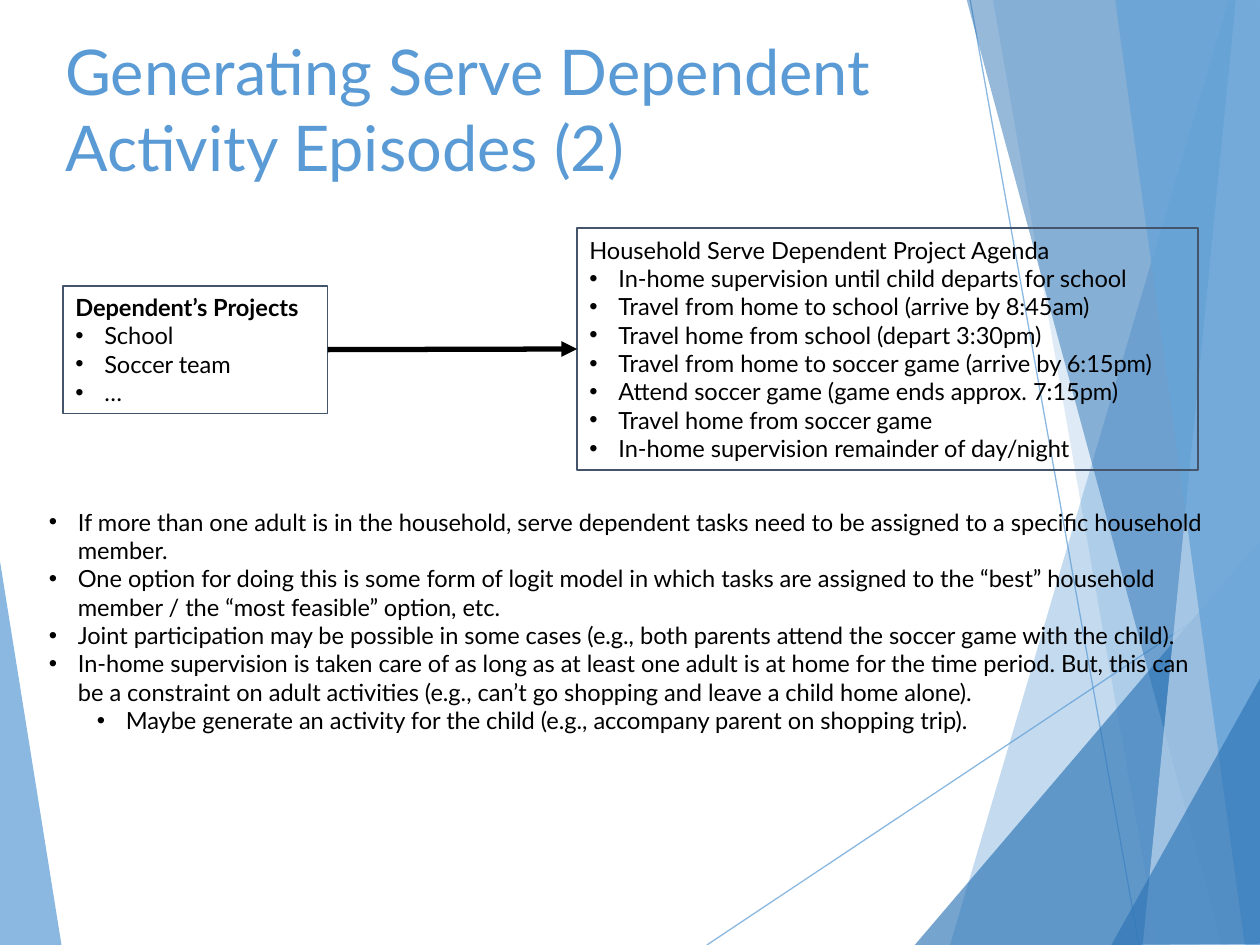
from lxml import etree
from pptx import Presentation
from pptx import util as u
from pptx.dml.color import RGBColor
from pptx.enum import shapes, text
from pptx.oxml.ns import qn

SCALE = 9144  # EMU per px, 100 px to the inch
FONT = "Lato"
BLUE, DEEP, PALE, MID = "5B9BD5", "2E75B6", "BDD7EE", "68A4D8"
BLACK, SLATE = "000000", "44546A"

# Facets from back to front: colour, opacity in percent, corners
WEDGE = (BLUE, 70, [(-1, 439), (49, 751), (-1, 750)])
FACETS = [
    (BLUE, 36, [(975, 0), (754, 750), (1002, 751), (1001, 1)]),
    (BLUE, 20, [(788, -1), (919, 750), (1001, 750), (1001, -1)]),
    (DEEP, 66, [(726, 750), (1000, 429), (1001, 750)]),
    (DEEP, 50, [(767, -1), (970, 750), (1001, 749), (1001, -1)]),
    (PALE, 70, [(981, -1), (907, 750), (1001, 750), (1000, -1)]),
    (MID, 82, [(885, -1), (988, 750), (1002, 750), (1000, -1)]),
    (DEEP, 66, [(882, 750), (1002, 535), (1002, 749)]),
]
RAYS = [((561, 750), (1001, 457)), ((770, 0), (904, 750))]

PROJECTS = ["Dependent’s Projects", "School", "Soccer team", "…"]
AGENDA = [
    "Household Serve Dependent Project Agenda",
    "In-home supervision until child departs for school",
    "Travel from home to school (arrive by 8:45am)",
    "Travel home from school (depart 3:30pm)",
    "Travel from home to soccer game (arrive by 6:15pm)",
    "Attend soccer game (game ends approx. 7:15pm)",
    "Travel home from soccer game",
    "In-home supervision remainder of day/night",
]
NOTES = [
    "If more than one adult is in the household, serve dependent tasks need to be "
    "assigned to a specific household member.",
    "One option for doing this is some form of logit model in which tasks are "
    "assigned to the “best” household member / the “most feasible” option, etc.",
    "Joint participation may be possible in some cases (e.g., both parents attend "
    "the soccer game with the child).",
    "In-home supervision is taken care of as long as at least one adult is at home "
    "for the time period. But, this can be a constraint on adult activities "
    "(e.g., can’t go shopping and leave a child home alone).",
    "Maybe generate an activity for the child (e.g., accompany parent on "
    "shopping trip).",
]


def px(*vals):
    return [u.Emu(v * SCALE) for v in vals]


def rgb(code):
    return RGBColor.from_string(code)


def fade(props, pct):
    """Set the opacity of the solid fill held by shape or line properties."""
    tone = props.find(qn("a:solidFill"))[0]
    etree.SubElement(tone, qn("a:alpha"), val=str(pct * 1000))


def bullet(para, left, level=0):
    """Give a paragraph a bullet that hangs 23 px before its text."""
    para.level = level
    props = para._p.get_or_add_pPr()
    props.set("marL", str(left * SCALE))
    props.set("indent", str(-23 * SCALE))
    etree.SubElement(props, qn("a:buFont"), typeface="Arial")
    etree.SubElement(props, qn("a:buChar"), char="•")


class Deck:
    """Holds the style and the current slide."""

    def __init__(self, wide, high):
        self.prs = Presentation()
        self.prs.slide_width, self.prs.slide_height = px(wide, high)
        self.slide = self.prs.slides.add_slide(self.prs.slide_layouts[6])
        self.items = self.slide.shapes

    def facet(self, color, pct, pts):
        pen = self.items.build_freeform(*pts[0], scale=SCALE)
        pen.add_line_segments(pts[1:])
        shape = pen.convert_to_shape()
        shape.shadow.inherit = False
        shape.fill.solid()
        shape.fill.fore_color.rgb = rgb(color)
        fade(shape._element.spPr, pct)
        shape.line.fill.background()

    def line(self, start, end, color, width):
        line = self.items.add_connector(
            shapes.MSO_CONNECTOR.STRAIGHT, *px(*start, *end))
        line.line.color.rgb = rgb(color)
        line.line.width = u.Pt(width)
        etree.SubElement(line._element.spPr, qn("a:effectLst"))
        return line

    def ray(self, start, end):
        line = self.line(start, end, BLUE, 0.75)
        fade(line._element.spPr.find(qn("a:ln")), 70)

    def arrow(self, left, right):
        """Join the right side of one box to the left side of another."""
        line = self.line((260, 277), (458, 277), BLACK, 3)
        line.begin_connect(left, 3)
        line.end_connect(right, 1)
        pen = line._element.spPr.find(qn("a:ln"))
        etree.SubElement(pen, qn("a:tailEnd"), type="triangle")

    def fill_in(self, shape, lines, size=13.5, color=BLACK):
        """Put styled lines of text in a shape and return its paragraphs."""
        frame = shape.text_frame
        frame.word_wrap = True
        frame.text = "\n".join(lines)
        for para in frame.paragraphs:
            para.alignment = text.PP_ALIGN.LEFT
            for run in para.runs:
                run.font.name = FONT
                run.font.size = u.Pt(size)
                run.font.color.rgb = rgb(color)
        return frame.paragraphs

    def label(self, area, lines, **style):
        return self.fill_in(self.items.add_textbox(*px(*area)), lines, **style)

    def box(self, area, lines, bold=False):
        """Draw an outlined box with a heading and bullets below it."""
        shape = self.items.add_shape(shapes.MSO_SHAPE.RECTANGLE, *px(*area))
        shape.shadow.inherit = False
        shape.fill.background()
        shape.line.color.rgb = rgb(SLATE)
        shape.line.width = u.Pt(0.75)
        head, *rest = self.fill_in(shape, lines)
        head.runs[0].font.bold = bold
        for para in rest:
            bullet(para, 23)
        return shape


def main():
    deck = Deck(1000, 750)
    deck.facet(*WEDGE)
    for ray in RAYS:
        deck.ray(*ray)
    for facet in FACETS:
        deck.facet(*facet)

    left = deck.box((50, 227, 210, 101), PROJECTS, bold=True)
    right = deck.box((458, 181, 493, 192), AGENDA)
    deck.arrow(left, right)

    *points, sub = deck.label((29, 398, 941, 215), NOTES)
    for para in points:
        bullet(para, 23)
    bullet(sub, 61, level=1)

    deck.label((42, 21, 694, 144),
               ["Generating Serve Dependent Activity Episodes (2)"],
               size=36, color=BLUE)
    deck.prs.save("out.pptx")


if __name__ == "__main__":
    main()
